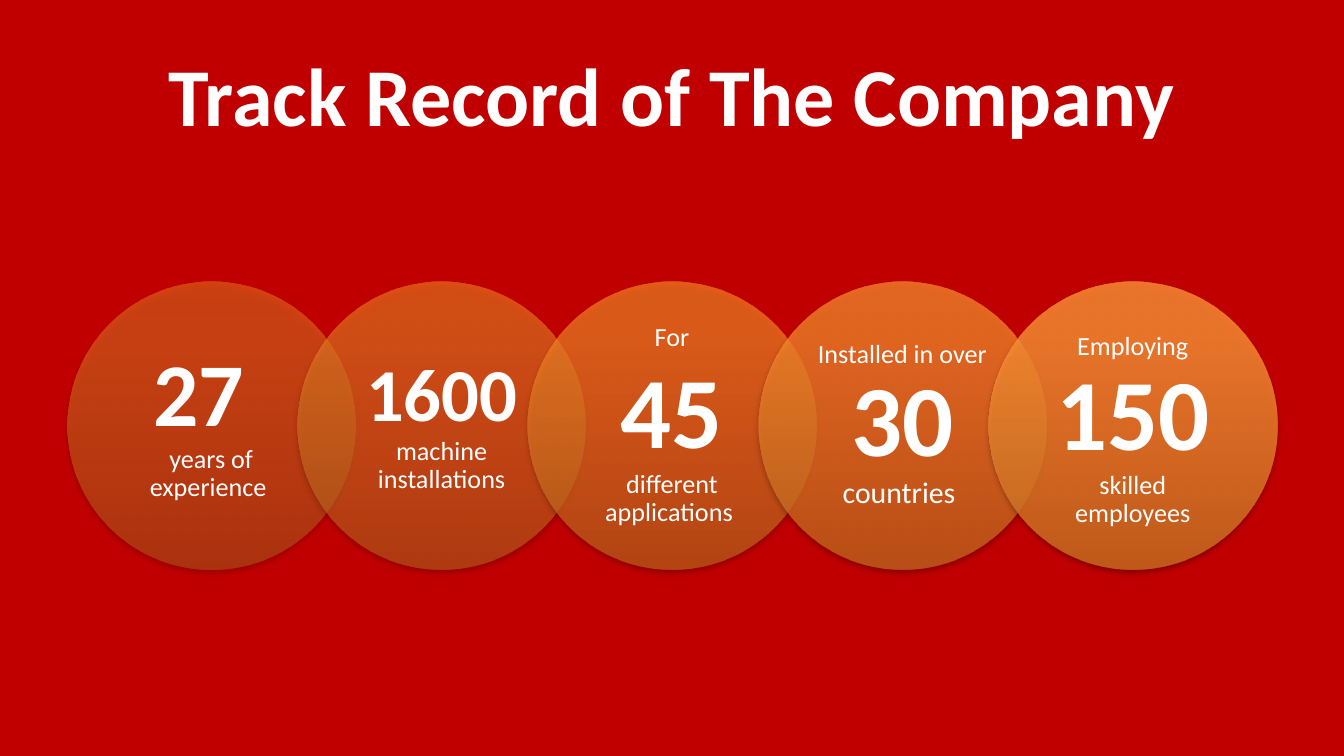
"""Build the track record slide with its row of linked circles."""
import math

from lxml import etree
from pptx import Presentation
from pptx import util as u
from pptx.dml.color import RGBColor
from pptx.enum import shapes, text
from pptx.oxml.ns import qn

Pt = u.Pt
FONT = "Calibri"
HUES = {"back": "C00000", "text": "FFFFFF", "shade": "000000"}
OVERLAP = 0.2

# Each line group is (runs, right margin, gap after in percent).
DISCS = [
    {"stops": ("B9641D", "F18226", "F68222"), "alpha": 50, "pad": 5,
     "paras": [([("27", 48, True)], 13, 0),
               ([("years of experience ", 14, False)], 0, 35)]},
    {"stops": ("BF661E", "F78527", "FD8523"), "alpha": 57, "pad": 4,
     "paras": [([("1600", 40, True), (" ", 18, False),
                 ("machine installations", 14, False)], 0, 35)]},
    {"stops": ("C3691F", "FE8928", "FF8928"), "alpha": 65, "pad": 1.5,
     "paras": [([("For", 14, False)], 0, 35),
               ([("45", 54, True), (" ", 18, False),
                 ("different applications ", 14, False)], 0, 35)]},
    {"stops": ("C86C20", "FF8C2E", "FF8D2F"), "alpha": 72, "pad": 1.5,
     "paras": [([("Installed in over ", 14, False), ("30", 54, True),
                 (" ", 20, False), ("countries ", 16, False)], 0, 35)]},
    {"stops": ("CC6F21", "FF9135", "FF9137"), "alpha": 80, "pad": 1.5,
     "paras": [([("Employing", 14, False), (" ", 20, False),
                 ("150", 54, True), (" ", 20, False),
                 ("skilled employees", 14, False)], 0, 35)]},
]


def style(run, size, bold):
    """Give a run its font, size, weight and colour."""
    run.font.name = FONT
    run.font.size = Pt(size)
    run.font.bold = bold
    run.font.color.rgb = RGBColor.from_string(HUES["text"])


def tint(parent, hue, alpha):
    """Add a colour with an opacity in percent to an XML parent."""
    color = etree.SubElement(parent, qn("a:srgbClr"), val=hue)
    etree.SubElement(color, qn("a:alpha"), val=str(alpha * 1000))


def shade(shape):
    """Give a shape a soft shadow below it."""
    shape.shadow.inherit = False
    effects = shape._element.spPr.find(qn("a:effectLst"))
    drop = etree.SubElement(
        effects, qn("a:outerShdw"), blurRad=str(Pt(3.1)), dist=str(Pt(1.8)),
        dir="5400000", algn="ctr", rotWithShape="0")
    tint(drop, HUES["shade"], 35)


def blend(shape, stops, alpha):
    """Fill a shape with a see-through gradient rising from its foot."""
    shape.fill.gradient()
    shape.fill.gradient_angle = 90
    marks = shape._element.spPr.find(qn("a:gradFill")).find(qn("a:gsLst"))
    for mark in list(marks):
        marks.remove(mark)
    for spot, hue in zip((0, 80, 100), stops):
        mark = etree.SubElement(marks, qn("a:gs"), pos=str(spot * 1000))
        tint(mark, hue, alpha)


def write(para, runs, right, gap):
    """Fill a centred paragraph with runs and space it."""
    para.alignment = text.PP_ALIGN.CENTER
    para.line_spacing = 0.9
    para.space_after = Pt(0)
    props = para._p.get_or_add_pPr()
    props.set("marR", str(Pt(right)))
    after = props.find(qn("a:spcAft"))
    after.remove(after[0])
    etree.SubElement(after, qn("a:spcPct"), val=str(gap * 1000))
    for words, size, bold in runs:
        run = para.add_run()
        run.text = words
        style(run, size, bold)


def add_disc(group, left, top, size, disc):
    """Place one circle and the text square that fits inside it."""
    oval = group.shapes.add_shape(
        shapes.MSO_SHAPE.OVAL, Pt(left), Pt(top), Pt(size), Pt(size))
    blend(oval, disc["stops"], disc["alpha"])
    oval.line.fill.background()
    shade(oval)

    side = size / math.sqrt(2)
    inset = (size - side) / 2
    box = group.shapes.add_textbox(
        Pt(left + inset), Pt(top + inset), Pt(side), Pt(side))
    frame = box.text_frame
    frame.word_wrap = True
    frame.vertical_anchor = text.MSO_ANCHOR.MIDDLE
    frame.margin_left = frame.margin_right = Pt(8.5)
    frame.margin_top = frame.margin_bottom = Pt(disc["pad"])
    for i, (runs, right, gap) in enumerate(disc["paras"]):
        para = frame.add_paragraph() if i else frame.paragraphs[0]
        write(para, runs, right, gap)


def add_row(slide, left, top, width, height):
    """Spread the linked circles over a box, centred on its height."""
    size = width / (1 + (len(DISCS) - 1) * (1 - OVERLAP))
    step = size * (1 - OVERLAP)
    group = slide.shapes.add_group_shape()
    for i, disc in enumerate(DISCS):
        add_disc(group, left + i * step, top + (height - size) / 2, size, disc)


def add_title(slide, left, top, width, height):
    """Place the title in its box."""
    title = slide.shapes.title
    title.left, title.top = Pt(left), Pt(top)
    title.width, title.height = Pt(width), Pt(height)
    frame = title.text_frame
    frame.text = "Track Record of The Company"
    frame.vertical_anchor = text.MSO_ANCHOR.MIDDLE
    para = frame.paragraphs[0]
    para.alignment = text.PP_ALIGN.CENTER
    style(para.runs[0], 44, True)


def main():
    """Build and save the deck."""
    deck = Presentation()
    deck.slide_width, deck.slide_height = Pt(720), Pt(405)
    slide = deck.slides.add_slide(deck.slide_layouts[5])
    slide.background.fill.solid()
    slide.background.fill.fore_color.rgb = RGBColor.from_string(HUES["back"])
    add_title(slide, 36, 16.5, 648, 67.5)
    add_row(slide, 36, 94, 648, 268)
    deck.save("out.pptx")


if __name__ == "__main__":
    main()
